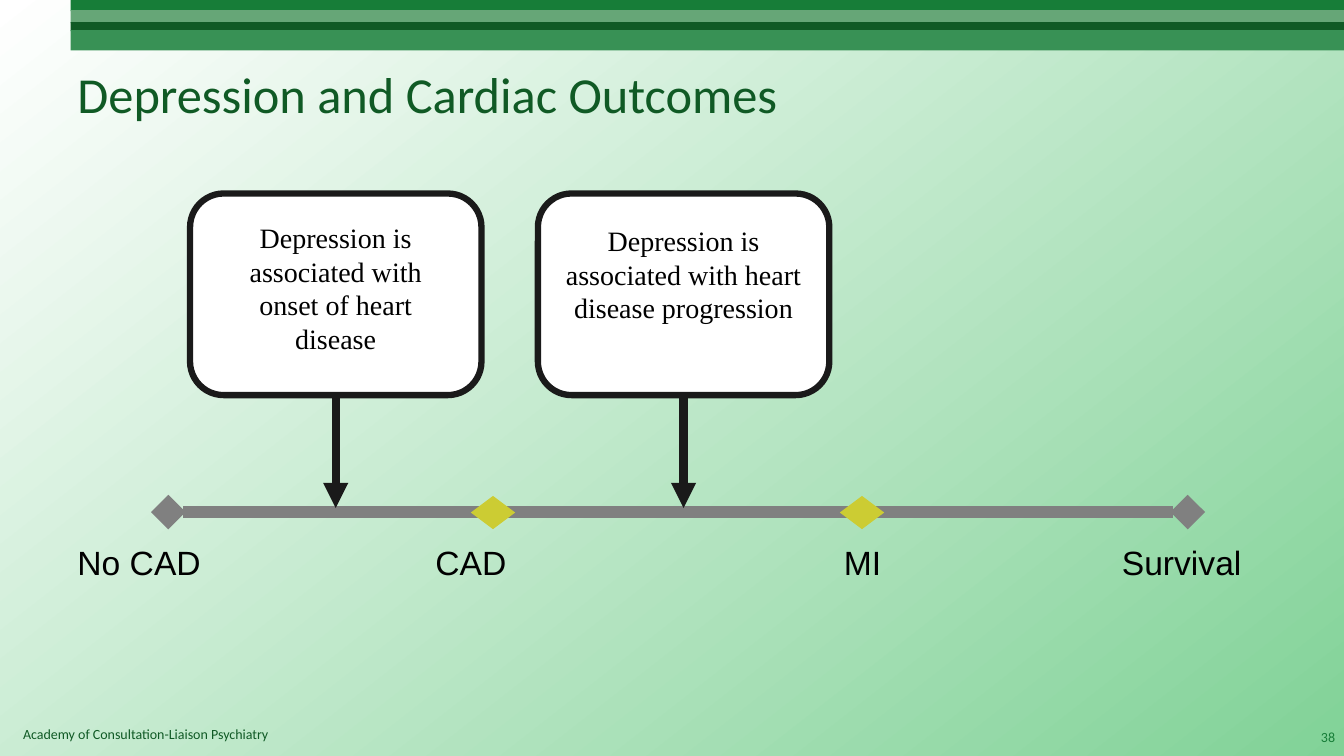
from pptx import Presentation
from pptx.dml.color import RGBColor
from pptx.enum import shapes, text
from pptx.oxml import ns
from pptx.util import Inches, Pt
from lxml import etree

COLORS = {
    "white": "FFFFFF", "mint": "81D297", "green": "177D38", "sage": "66A677",
    "forest": "105A25", "leaf": "389155", "ink": "1A1A1A", "gray": "808080",
    "yellow": "CCCC33", "black": "000000",
}
RGB = {name: RGBColor.from_string(value) for name, value in COLORS.items()}
ALIGN = text.PP_ALIGN
TOP, MIDDLE = text.MSO_ANCHOR.TOP, text.MSO_ANCHOR.MIDDLE

presentation = Presentation()
presentation.slide_width = Inches(13.33)
presentation.slide_height = Inches(7.5)
slide = presentation.slides.add_slide(presentation.slide_layouts[6])


def add_text(words, box, size, font, color, align=ALIGN.LEFT, anchor=TOP):
    frame = slide.shapes.add_textbox(*map(Inches, box)).text_frame
    frame.word_wrap = True
    frame.vertical_anchor = anchor
    frame.text = words
    paragraph = frame.paragraphs[0]
    paragraph.alignment = align
    run_font = paragraph.runs[0].font
    run_font.size = Pt(size)
    run_font.name = font
    run_font.color.rgb = RGB[color]


def add_line(start, end, color, width, **ends):
    line = slide.shapes.add_connector(
        shapes.MSO_CONNECTOR.STRAIGHT, *map(Inches, start + end))
    line.line.color.rgb = RGB[color]
    line.line.width = Pt(width)
    for tag, kind in ends.items():
        etree.SubElement(line.line._get_or_add_ln(), ns.qn("a:" + tag), type=kind)
    etree.SubElement(line._element.spPr, ns.qn("a:effectLst"))


# Background gradient
fill = slide.background.fill
fill.gradient()
fill.gradient_angle = 308
for stop, color in zip(fill.gradient_stops, ("white", "mint")):
    stop.color.rgb = RGB[color]

# Header bands
for top, height, color in ((0, 0.11, "green"), (0.1, 0.13, "sage"),
                           (0.22, 0.09, "forest"), (0.3, 0.2, "leaf")):
    band = slide.shapes.add_shape(
        shapes.MSO_SHAPE.RECTANGLE, *map(Inches, (0.7, top, 12.63, height)))
    band.shadow.inherit = False
    band.fill.solid()
    band.fill.fore_color.rgb = RGB[color]
    band.line.fill.background()

# Title, footer and slide number
add_text("Depression and Cardiac Outcomes", (0.67, 0.3, 12, 1.25),
         36, "Calibri", "forest", anchor=MIDDLE)
add_text("Academy of Consultation-Liaison Psychiatry", (0.13, 7.15, 9.25, 0.27),
         10, "Calibri", "forest")
add_text("38", (12.94, 7.11, 0.4, 0.4), 10, "Calibri", "green",
         ALIGN.RIGHT, MIDDLE)

# Timeline with its milestones
add_line((1.67, 5.08), (11.78, 5.08), "gray", 8.25,
         headEnd="diamond", tailEnd="diamond")
for left in (4.67, 8.33):
    milestone = slide.shapes.add_shape(
        shapes.MSO_SHAPE.DIAMOND, *map(Inches, (left, 4.92, 0.44, 0.33)))
    milestone.shadow.inherit = False
    milestone.fill.solid()
    milestone.fill.fore_color.rgb = RGB["yellow"]
    milestone.line.fill.background()

for label, left, width, align in (
        ("No CAD", 0.67, 2, ALIGN.LEFT), ("CAD", 4.22, 1.33, ALIGN.LEFT),
        ("MI", 8, 1.11, ALIGN.CENTER), ("Survival", 10.44, 2.56, ALIGN.CENTER)):
    add_text(label, (left, 5.33, width, 0.5), 24, "Arial", "black", align)

# Callouts pointing down to the timeline
CALLOUT_WIDTH = 2.89
for center, words, text_top, text_width, text_height in (
        (3.33, "Depression is associated with onset of heart disease",
         2.14, 2.44, 1.45),
        (6.78, "Depression is associated with heart disease progression",
         2.17, 2.67, 1.11)):
    callout = slide.shapes.add_shape(
        shapes.MSO_SHAPE.ROUNDED_RECTANGLE,
        *map(Inches, (center - CALLOUT_WIDTH / 2, 1.92, CALLOUT_WIDTH, 2)))
    callout.shadow.inherit = False
    callout.fill.solid()
    callout.fill.fore_color.rgb = RGB["white"]
    callout.line.color.rgb = RGB["ink"]
    callout.line.width = Pt(4.5)
    add_line((center, 3.92), (center, 5.04), "ink", 6, tailEnd="triangle")
    add_text(words, (center - text_width / 2, text_top, text_width, text_height),
             20, "Times New Roman", "black", ALIGN.CENTER)

presentation.save("out.pptx")
